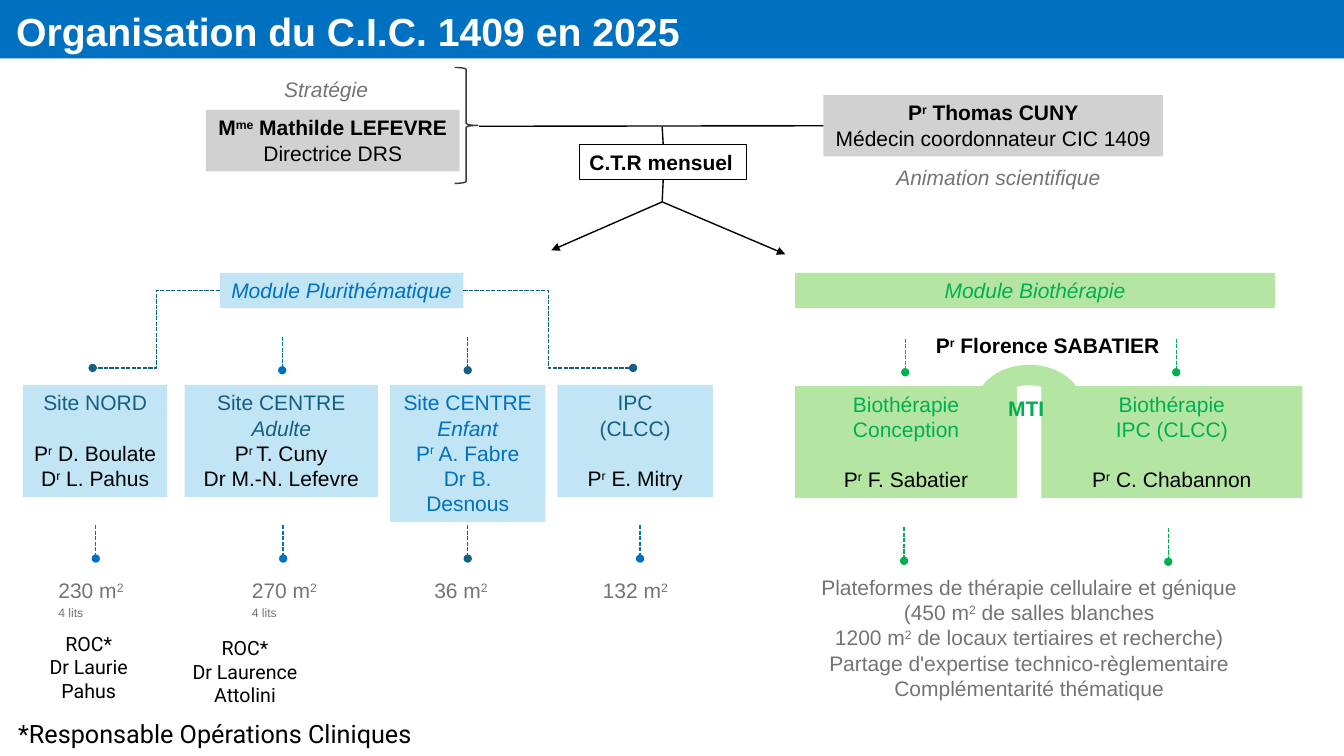
from pptx import Presentation, util as u
from pptx.dml.color import RGBColor
from pptx.enum import dml, shapes, text
from pptx.oxml.ns import qn
from lxml import etree

Pt = u.Pt
KIND = shapes.MSO_SHAPE
HEX = {"black": "000000", "white": "FFFFFF", "grey": "747474", "silver": "D1D1D1",
       "ink": "3A3A3A", "blue": "0070C0", "teal": "156082", "sky": "C1E5F5",
       "green": "00B050", "lime": "B4E5A2"}
LEFT, MID = text.PP_ALIGN.LEFT, text.PP_ALIGN.CENTER


def tint(name):
    return RGBColor.from_string(HEX[name])


def write(frame, lines, size=15, face="Arial", align=MID, wrap=False):
    frame.word_wrap = wrap
    frame.auto_size = text.MSO_AUTO_SIZE.NONE
    for i, (words, hue, style) in enumerate(lines):
        para = frame.paragraphs[0] if i == 0 else frame.add_paragraph()
        para.alignment = align
        if "g" in style:
            para.space_before = Pt(18)
        for j, part in enumerate(words.split("^")):
            if not part:
                continue
            run = para.add_run()
            run.text = part
            font = run.font
            font.size, font.name = Pt(size), face
            font.bold, font.italic = "b" in style, "i" in style
            font.color.rgb = tint(hue)
            if j % 2:
                run._r.get_or_add_rPr().set("baseline", "30000")


def block(slide, box, fill=None, lines=(), kind=KIND.RECTANGLE, edge=None,
          thick=1, anchor=text.MSO_ANCHOR.TOP, **opts):
    shape = slide.shapes.add_shape(kind, *map(Pt, box))
    shape.shadow.inherit = False
    if fill:
        shape.fill.solid()
        shape.fill.fore_color.rgb = tint(fill)
    else:
        shape.fill.background()
    if edge:
        shape.line.color.rgb = tint(edge)
        shape.line.width = Pt(thick)
    else:
        shape.line.fill.background()
    shape.text_frame.vertical_anchor = anchor
    write(shape.text_frame, lines, **opts)
    return shape


def label(slide, box, lines, **opts):
    write(slide.shapes.add_textbox(*map(Pt, box)).text_frame, lines, **opts)


def link(slide, start, end, hue="black", tail=None, dash=False, bent=False):
    kind = shapes.MSO_CONNECTOR.ELBOW if bent else shapes.MSO_CONNECTOR.STRAIGHT
    line = slide.shapes.add_connector(kind, *map(Pt, (*start, *end)))
    line.line.color.rgb = tint(hue)
    line.line.width = Pt(1)
    if dash:
        line.line.dash_style = dml.MSO_LINE.SQUARE_DOT
    if tail:
        etree.SubElement(line.line._get_or_add_ln(), qn("a:tailEnd"), type=tail)
    etree.SubElement(line._element.spPr, qn("a:effectLst"))
    return line


def stem(slide, x, y, hue):
    link(slide, (x, y), (x, y + 24), hue, "oval", True)


def banner(slide, box):
    title = slide.shapes.title
    title.left, title.top, title.width, title.height = map(Pt, box)
    title.fill.solid()
    title.fill.fore_color.rgb = tint("blue")
    frame = title.text_frame
    frame.vertical_anchor = text.MSO_ANCHOR.TOP
    frame.margin_left, frame.margin_top = Pt(11.5), Pt(5)
    write(frame, [("Organisation du C.I.C. 1409 en 2025", "white", "b")],
          size=28, align=LEFT, wrap=True)


def board(slide, box):
    x, y, w, h = box
    block(slide, (x, y + 30.3, 181.4, 43.9), "silver",
          [("M^me^ Mathilde LEFEVRE", "black", "b"), ("Directrice DRS", "black", "")])
    cuny = block(slide, (x + w - 242.6, y + 19.7, 242.6, 43.9), "silver",
                 [("P^r^ Thomas CUNY", "black", "b"),
                  ("Médecin coordonnateur CIC 1409", "black", "")])
    label(slide, (x + 48.1, y + 3.1, 75.6, 25.2), [("Stratégie", "grey", "i")])
    label(slide, (x + 485.2, y + 65.8, 162, 25.2),
          [("Animation scientifique", "grey", "i")])
    block(slide, (x + 177.7, y, 16.6, 82.8), kind=KIND.RIGHT_BRACE, edge="ink")
    ctr = block(slide, (x + 267, y + 55, 119.5, 25.2), "white",
                [("C.T.R mensuel", "black", "b")], edge="black", thick=0.75, align=LEFT)
    fork = x + 326, y + 96
    link(slide, (x + w - 242.6, y + 41.6), (x + 195, y + 42)).begin_connect(cuny, 1)
    link(slide, (x + 326, y + 42.5), (x + 326, y + 55)).end_connect(ctr, 0)
    link(slide, (x + 326, y + 80), fork).begin_connect(ctr, 2)
    for dx, dy in ((246.8, 130.6), (413.9, 133.4)):
        link(slide, fork, (x + dx, y + dy), tail="triangle")


def plural(slide, box):
    x, y, w, h = box
    head = block(slide, (x + 140.5, y, 174, 25.2), "sky",
                 [("Module Plurithématique", "blue", "i")])
    sites = [
        (0, 103, 79.9, [("Site NORD", "teal", ""), ("P^r^ D. Boulate", "black", "g"),
                        ("D^r^ L. Pahus", "black", "")]),
        (115.3, 138.2, 79.9, [("Site CENTRE", "teal", ""), ("Adulte", "teal", "i"),
                              ("P^r ^T. Cuny", "black", ""),
                              ("Dr M.-N. Lefevre", "black", "")]),
        (262.1, 111, 97.9, [("Site CENTRE", "blue", ""), ("Enfant", "blue", "i"),
                            ("P^r^ A. Fabre", "blue", ""), ("Dr B. Desnous", "blue", "")]),
        (381.7, 111, 79.9, [("IPC", "teal", ""), ("(CLCC)", "teal", ""),
                            ("P^r^ E. Mitry", "black", "g")])]
    for dx, wide, tall, lines in sites:
        block(slide, (x + dx, y + 80, wide, tall), "sky", lines, wrap=wide > 103)
    for side, start, end in ((1, 140.5, 49.7), (3, 314.5, 435.7)):
        link(slide, (x + start, y + 12.6), (x + end, y + 67.8), "teal", "oval",
             True, True).begin_connect(head, side)
    stem(slide, x + 185.1, y + 45.5, "blue")
    stem(slide, x + 317.6, y + 45.5, "teal")
    rooms = [(51.9, 18.1, 62, "230", "blue", True), (185.8, 156.3, 62, "270", "blue", True),
             (317.6, 286.6, 54, "36", "teal", False),
             (440.7, 406.9, 62, "132", "blue", False)]
    for axis, dx, wide, area, hue, beds in rooms:
        stem(slide, x + axis, y + 180, hue)
        lines = [(area + " m^2", "grey", "")]
        if beds:
            lines.append(("^4 lits", "grey", ""))
        label(slide, (x + dx, y + 214, wide, 25.2 + 18.7 * beds), lines, align=LEFT)
    for dx, dy, wide, first, last in ((-8.6, 252.8, 111, "Dr Laurie", "Pahus"),
                                      (90.8, 255.7, 135.4, "Dr Laurence", "Attolini")):
        label(slide, (x + dx, y + dy, wide, 58),
              [(part, "black", "") for part in ("ROC*", first, last)],
              size=14, face="Roboto")


def bio(slide, box):
    x, y, w, h = box
    block(slide, (x, y, 342.7, 25.2), "lime", [("Module Biothérapie", "green", "i")])
    for dx, wide, unit, chief in ((0, 158.4, "Conception", "F. Sabatier"),
                                  (175.8, 186.5, "IPC (CLCC)", "C. Chabannon")):
        block(slide, (x + dx, y + 80.8, wide, 79.9), "lime",
              [("Biothérapie", "green", ""), (unit, "green", ""),
               ("P^r^ " + chief, "black", "g")], wrap=True)
    for dx, dy in ((78.6, 46.9), (272.2, 46.9), (77.8, 181.6), (266.5, 182.3)):
        stem(slide, x + dx, y + dy, "green")
    label(slide, (x + 91.5, y + 39, 177.8, 25.2), [("P^r^ Florence SABATIER", "black", "b")])
    block(slide, (x + 129, y + 65.6, 76.3, 58.3), "lime", kind=KIND.BLOCK_ARC)
    block(slide, (x + 126.1, y + 74.3, 77.8, 44.6), None, [("MTI", "green", "b")],
          kind=KIND.ROUNDED_RECTANGLE, anchor=text.MSO_ANCHOR.MIDDLE, wrap=True)
    facts = ("Plateformes de thérapie cellulaire et génique",
             "(450 m^2^ de salles blanches",
             "1200 m^2^ de locaux tertiaires et recherche)",
             "Partage d'expertise technico-règlementaire",
             "Complémentarité thématique")
    label(slide, (x - 73.4, y + 211.8, 481, 97.9),
          [(fact, "grey", "") for fact in facts], wrap=True)


def footer(slide, box):
    label(slide, box, [("*Responsable Opérations Cliniques", "black", "")],
          size=18, face="Roboto", align=LEFT)


def main():
    deck = Presentation()
    deck.slide_width, deck.slide_height = Pt(960), Pt(540)
    slide = deck.slides.add_slide(deck.slide_layouts[5])
    banner(slide, (0, 0, 960, 41.8))
    board(slide, (147, 48.2, 683.8, 133.4))
    plural(slide, (16.5, 195, 492.7, 318))
    bio(slide, (568, 195, 362.3, 310))
    footer(slide, (5.8, 509.8, 298, 28.8))
    deck.save("out.pptx")


if __name__ == "__main__":
    main()
